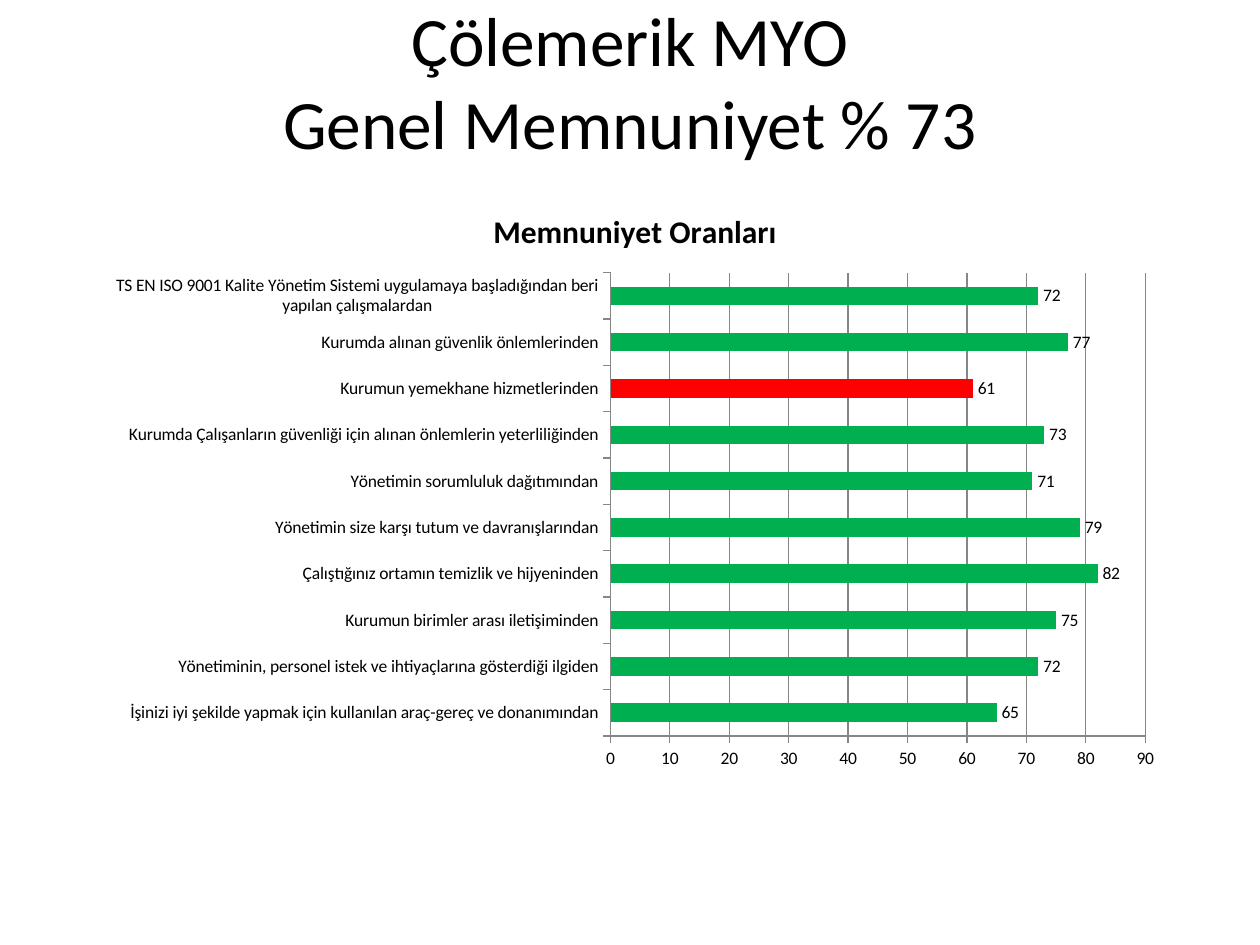
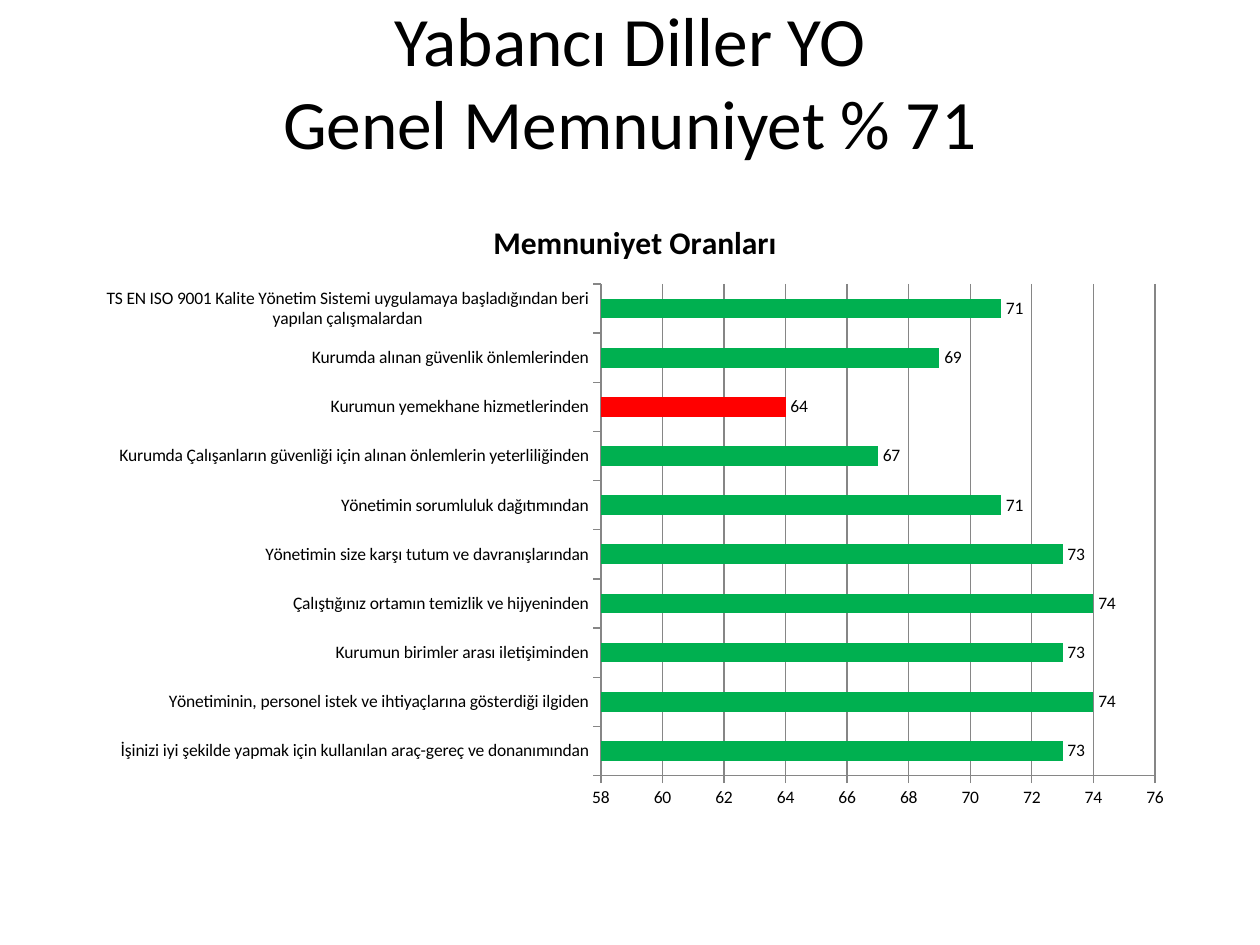
import copy

import pptx
import pptx.chart.data
import pptx.dml.color
import pptx.enum.chart
import pptx.enum.text
import pptx.oxml.ns
import pptx.util

Inches = pptx.util.Inches
FONT = "Calibri"
BLACK, GREEN, RED, GREY = "000000", "00B050", "FF0000", "868686"
CHART_TITLE = "Memnuniyet Oranları"
LOWEST = 7
TOPICS = [
    "İşinizi iyi şekilde yapmak için kullanılan araç-gereç ve donanımından",
    "Yönetiminin, personel istek ve ihtiyaçlarına gösterdiği ilgiden",
    "Kurumun birimler arası iletişiminden",
    "Çalıştığınız ortamın temizlik ve hijyeninden",
    "Yönetimin size karşı tutum ve davranışlarından",
    "Yönetimin sorumluluk dağıtımından",
    "Kurumda Çalışanların güvenliği için alınan önlemlerin yeterliliğinden",
    "Kurumun yemekhane hizmetlerinden",
    "Kurumda alınan güvenlik önlemlerinden",
    "TS EN ISO 9001 Kalite Yönetim Sistemi uygulamaya başladığından beri yapılan çalışmalardan",
]


def rgb(color):
    return pptx.dml.color.RGBColor.from_string(color)


def set_font(font, size, color=BLACK, bold=False):
    font.name = FONT
    font.size = pptx.util.Pt(size)
    font.bold = bold
    font.color.rgb = rgb(color)


def fill(fmt, color):
    fmt.fill.solid()
    fmt.fill.fore_color.rgb = rgb(color)


def write(tf, text, size, color=BLACK, bold=False):
    p = tf.paragraphs[0]
    p.text = text
    p.alignment = pptx.enum.text.PP_ALIGN.CENTER
    for r in p.runs:
        set_font(r.font, size, color, bold)
    for br in p._p.findall(pptx.oxml.ns.qn("a:br")):
        br.append(copy.deepcopy(p.runs[0]._r.rPr))


def add_title(s, unit, rate):
    sp = s.shapes.title
    sp.left, sp.top, sp.width, sp.height = map(Inches, (0.5, 0.3, 9, 1.25))
    tf = sp.text_frame
    tf.word_wrap = True
    tf.auto_size = pptx.enum.text.MSO_AUTO_SIZE.NONE
    tf.vertical_anchor = pptx.enum.text.MSO_ANCHOR.MIDDLE
    tf.margin_bottom = Inches(0.62)
    write(tf, f"{unit}\vGenel Memnuniyet % {rate}", size=39.6)


def format_axis(axis):
    axis.major_tick_mark = pptx.enum.chart.XL_TICK_MARK.OUTSIDE
    axis.minor_tick_mark = pptx.enum.chart.XL_TICK_MARK.NONE
    axis.format.line.color.rgb = rgb(GREY)
    set_font(axis.tick_labels.font, 10)


def add_rates_chart(s, box, values, scale):
    data = pptx.chart.data.CategoryChartData()
    data.categories = TOPICS
    data.add_series(CHART_TITLE, values)
    kind = pptx.enum.chart.XL_CHART_TYPE.BAR_CLUSTERED
    chart = s.shapes.add_chart(kind, *map(Inches, box), data).chart
    set_font(chart.font, 10)
    chart.has_legend = False
    chart.has_title = True
    write(chart.chart_title.text_frame, CHART_TITLE, size=18, bold=True)

    format_axis(chart.category_axis)
    axis = chart.value_axis
    format_axis(axis)
    axis.minimum_scale, axis.maximum_scale, axis.major_unit = scale
    axis.has_major_gridlines = True
    axis.major_gridlines.format.line.color.rgb = rgb(GREY)

    plot = chart.plots[0]
    plot.gap_width = 150
    plot.vary_by_categories = False
    series = plot.series[0]
    fill(series.format, GREEN)
    fill(series.points[LOWEST].format, RED)
    labels = series.data_labels
    labels.show_value = True
    labels.position = pptx.enum.chart.XL_LABEL_POSITION.OUTSIDE_END
    set_font(labels.font, 10)


def add_unit_slide(prs, unit, rate, box, values, scale):
    s = prs.slides.add_slide(prs.slide_layouts[5])
    add_title(s, unit, rate)
    add_rates_chart(s, box, values, scale)


def main():
    prs = pptx.Presentation()
    prs.slide_width, prs.slide_height = Inches(10), Inches(7.5)
    add_unit_slide(prs, "Çölemerik MYO", 73, (0.75, 1.47, 8.58, 4.72),
                   [65, 72, 75, 82, 79, 71, 73, 61, 77, 72], (0, 90, 10))
    add_unit_slide(prs, "Yabancı Diller YO", 71, (0.67, 1.55, 8.74, 4.96),
                   [73, 74, 73, 74, 73, 71, 67, 64, 69, 71], (58, 76, 2))
    prs.save("out.pptx")


if __name__ == "__main__":
    main()
